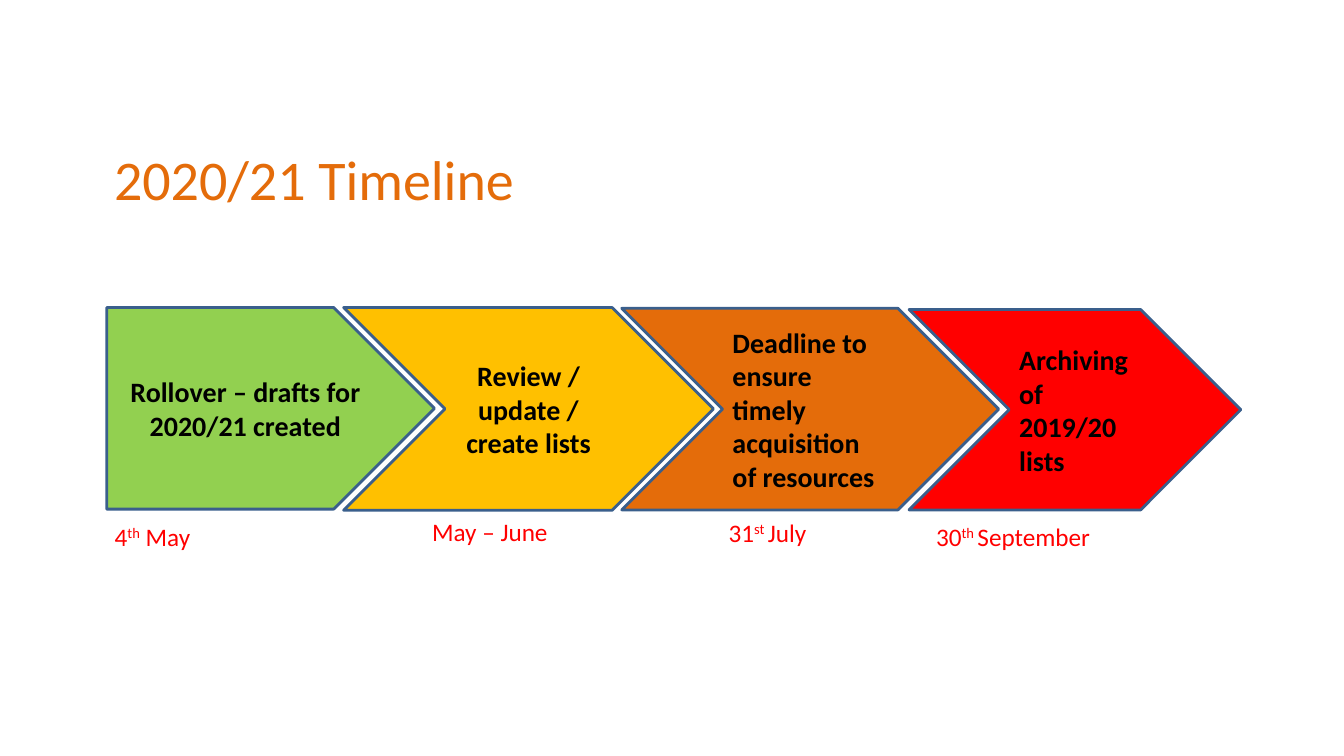
from pptx import Presentation
from pptx import util as u
from pptx.dml import color
from pptx.enum import shapes, text

PLATE = shapes.MSO_SHAPE.PENTAGON
CHEVRON = shapes.MSO_SHAPE.CHEVRON
LEFT, CENTER = text.PP_ALIGN.LEFT, text.PP_ALIGN.CENTER
TOP, MIDDLE = text.MSO_ANCHOR.TOP, text.MSO_ANCHOR.MIDDLE

STEPS = [
    (PLATE, (2.69, 7.75, 8.26, 5.08), "92D050", CENTER,
     "Rollover – drafts for 2020/21 created"),
    (CHEVRON, (8.66, 7.75, 9.32, 5.11), "FFC000", CENTER,
     "Review / update / create lists"),
    (CHEVRON, (15.67, 7.77, 9.5, 5.08), "E46C0A", LEFT,
     "Deadline to ensure timely acquisition of resources"),
    (CHEVRON, (22.91, 7.8, 8.36, 5.05), "FF0000", LEFT,
     "Archiving of 2019/20 lists"),
]
# Each date is split into (text, raised) runs.
DATES = [
    ((2.64, 13, 16.94, 1.02), [("4", False), ("th", True), (" May", False)]),
    ((10.64, 12.88, 3.68, 1.02), [("May – June", False)]),
    ((18.11, 12.9, 2.9, 1.02), [("31", False), ("st ", True), ("July", False)]),
    ((23.34, 13, 5.11, 1.02),
     [("30", False), ("th ", True), ("September", False)]),
]


def rgb(code):
    return color.RGBColor.from_string(code)


def apply(item, values):
    for name, value in values.items():
        setattr(item, name, value)


def place(box):
    return [u.Cm(n) for n in box]


def write(shape, runs, size, hue, bold=False, align=LEFT, anchor=TOP):
    """Fill the shape with one paragraph of (text, raised) runs."""
    frame = shape.text_frame
    apply(frame, {"word_wrap": True, "vertical_anchor": anchor,
                  "auto_size": text.MSO_AUTO_SIZE.NONE})
    para = frame.paragraphs[0]
    para.alignment = align
    for words, raised in runs:
        run = para.add_run()
        run.text = words
        apply(run.font, {"name": "Calibri", "size": u.Pt(size), "bold": bold})
        run.font.color.rgb = rgb(hue)
        if raised:
            run._r.get_or_add_rPr().set("baseline", "30000")


def add_title(slide, words):
    title = slide.shapes.title
    sides = ("left", "top", "width", "height")
    apply(title, dict(zip(sides, place((2.62, 3.51, 11.28, 1.96)))))
    write(title, [(words, False)], 40, "E46C0A")


def add_step(slide, kind, box, fill, align, words):
    step = slide.shapes.add_shape(kind, *place(box))
    step.shadow.inherit = False
    step.fill.solid()
    step.fill.fore_color.rgb = rgb(fill)
    step.line.color.rgb = rgb("3A5F8C")
    step.line.width = u.Pt(2)
    write(step, [(words, False)], 20, "000000", True, align, MIDDLE)


def add_date(slide, box, runs):
    write(slide.shapes.add_textbox(*place(box)), runs, 18, "FF0000")


def main():
    deck = Presentation()
    apply(deck, {"slide_width": u.Cm(33.87), "slide_height": u.Cm(19.05)})
    slide = deck.slides.add_slide(deck.slide_layouts[5])
    add_title(slide, "2020/21 Timeline")
    for step in STEPS:
        add_step(slide, *step)
    for date in DATES:
        add_date(slide, *date)
    deck.save("out.pptx")


if __name__ == "__main__":
    main()
